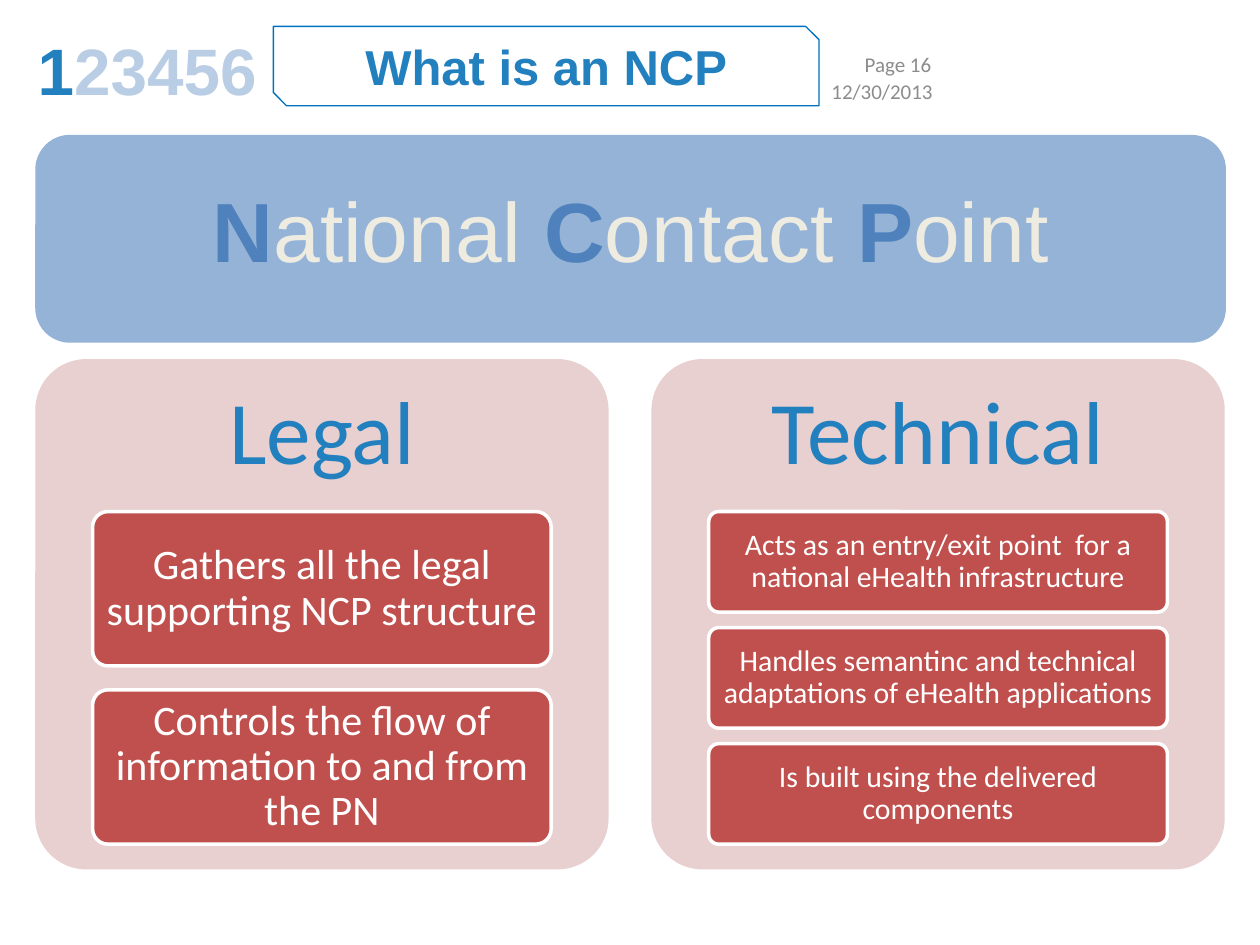
from pptx import Presentation
from pptx.dml.color import RGBColor
from pptx.enum.shapes import MSO_SHAPE
from pptx.enum.text import MSO_ANCHOR, PP_ALIGN
from pptx.util import Inches, Pt

ROUNDED = MSO_SHAPE.ROUNDED_RECTANGLE
SNIPPED = MSO_SHAPE.SNIP_2_DIAG_RECTANGLE
MIDDLE = MSO_ANCHOR.MIDDLE
LEFT, CENTER, RIGHT, JUSTIFY = (
    PP_ALIGN.LEFT, PP_ALIGN.CENTER, PP_ALIGN.RIGHT, PP_ALIGN.JUSTIFY)

BLUE, PALE_BLUE, GRAY, WHITE = "2380BF", "B9CDE5", "8C8C8C", "FFFFFF"
BANNER_FILL, INITIAL, CREAM = "95B3D7", "4F81BD", "EEECE1"
PANEL_FILL, CARD_FILL, TITLE_LINE = "E8D0D0", "C0504D", "0070C0"

# Runs are (text, colour, bold)
PAGE = [("Page 16", GRAY, False)]
DATE = [("12/30/2013", GRAY, False)]
TITLE = [("What is an NCP", BLUE, True)]
SECTIONS = [("1", BLUE, True), ("23456", PALE_BLUE, True)]
BANNER = [
    ("N", INITIAL, True), ("ational ", CREAM, False),
    ("C", INITIAL, True), ("ontact ", CREAM, False),
    ("P", INITIAL, True), ("oint", CREAM, False),
]
# Panels are (heading, card text size, cards)
PANELS = [
    ("Legal", 24, [
        "Gathers all the legal supporting NCP structure",
        "Controls the flow of information to and from the PN",
    ]),
    ("Technical", 17, [
        "Acts as an entry/exit point  for a national eHealth infrastructure",
        "Handles semantinc and technical adaptations of eHealth applications",
        "Is built using the delivered components",
    ]),
]

PANEL_LEFT, PANEL_TOP, PANEL_W, PANEL_H = 0.28, 2.85, 4.55, 4.05
PANEL_STEP = 4.89
HEADING_H = 1.22
CARD_TOP, CARD_W, CARDS_H = 4.06, 3.64, 2.64
GAP_RATIO = 0.154  # gap between cards, as a share of card height


def rgb(color):
    return RGBColor.from_string(color)


def write(box, runs, size, font, align=CENTER, spacing=None, inset=(0.1, 0.05)):
    frame = box.text_frame
    frame.word_wrap = True
    frame.vertical_anchor = MIDDLE
    frame.margin_left = frame.margin_right = Inches(inset[0])
    frame.margin_top = frame.margin_bottom = Inches(inset[1])
    paragraph = frame.paragraphs[0]
    paragraph.alignment = align
    if spacing:
        paragraph.line_spacing = spacing
    for text, color, bold in runs:
        run = paragraph.add_run()
        run.text = text
        run.font.name = font
        run.font.size = Pt(size)
        run.font.bold = bold
        run.font.color.rgb = rgb(color)


def add_box(slide, kind, place, fill=None, line=None, width=1, corner=None):
    box = slide.shapes.add_shape(kind, *map(Inches, place))
    box.shadow.inherit = False
    if fill:
        box.fill.solid()
        box.fill.fore_color.rgb = rgb(fill)
    else:
        box.fill.background()
    if line:
        box.line.color.rgb = rgb(line)
        box.line.width = Pt(width)
    else:
        box.line.fill.background()
    if corner:
        box.adjustments[0] = corner
    return box


def add_label(slide, place, runs, size, font, **layout):
    label = slide.shapes.add_textbox(*map(Inches, place))
    write(label, runs, size, font, **layout)


def add_panel(slide, left, heading, card_size, cards):
    add_box(slide, ROUNDED, (left, PANEL_TOP, PANEL_W, PANEL_H),
            PANEL_FILL, corner=0.1)
    add_label(slide, (left, PANEL_TOP, PANEL_W, HEADING_H),
              [(heading, BLUE, False)], 51, "Calibri",
              spacing=0.9, inset=(0.21, 0.21))
    count = len(cards)
    card_h = CARDS_H / (count + (count - 1) * GAP_RATIO)
    card_left = left + (PANEL_W - CARD_W) / 2
    for i, text in enumerate(cards):
        top = CARD_TOP + i * card_h * (1 + GAP_RATIO)
        card = add_box(slide, ROUNDED, (card_left, top, CARD_W, card_h),
                       CARD_FILL, WHITE, 2, corner=0.1)
        write(card, [(text, WHITE, False)], card_size, "Calibri",
              spacing=0.9, inset=(0.04, 0.02))


def main():
    deck = Presentation()
    deck.slide_width, deck.slide_height = Inches(10), Inches(7.5)
    slide = deck.slides.add_slide(deck.slide_layouts[6])

    add_label(slide, (6.33, 0.31, 1.16, 0.4), PAGE, 12, "Calibri", align=RIGHT)
    title = add_box(slide, SNIPPED, (2.17, 0.21, 4.33, 0.63),
                    line=TITLE_LINE, width=0.75)
    write(title, TITLE, 28, "Arial")
    add_label(slide, (0.2, 0.29, 7.32, 0.63), SECTIONS, 37.5, "Arial",
              align=JUSTIFY, spacing=0.8)
    add_label(slide, (6.5, 0.52, 1.25, 0.4), DATE, 12, "Calibri", align=LEFT)

    for i, panel in enumerate(PANELS):
        add_panel(slide, PANEL_LEFT + i * PANEL_STEP, *panel)

    banner = add_box(slide, ROUNDED, (0.28, 1.07, 9.45, 1.65), BANNER_FILL)
    write(banner, BANNER, 48, "Arial", spacing=0.8)

    deck.save("out.pptx")


if __name__ == "__main__":
    main()
